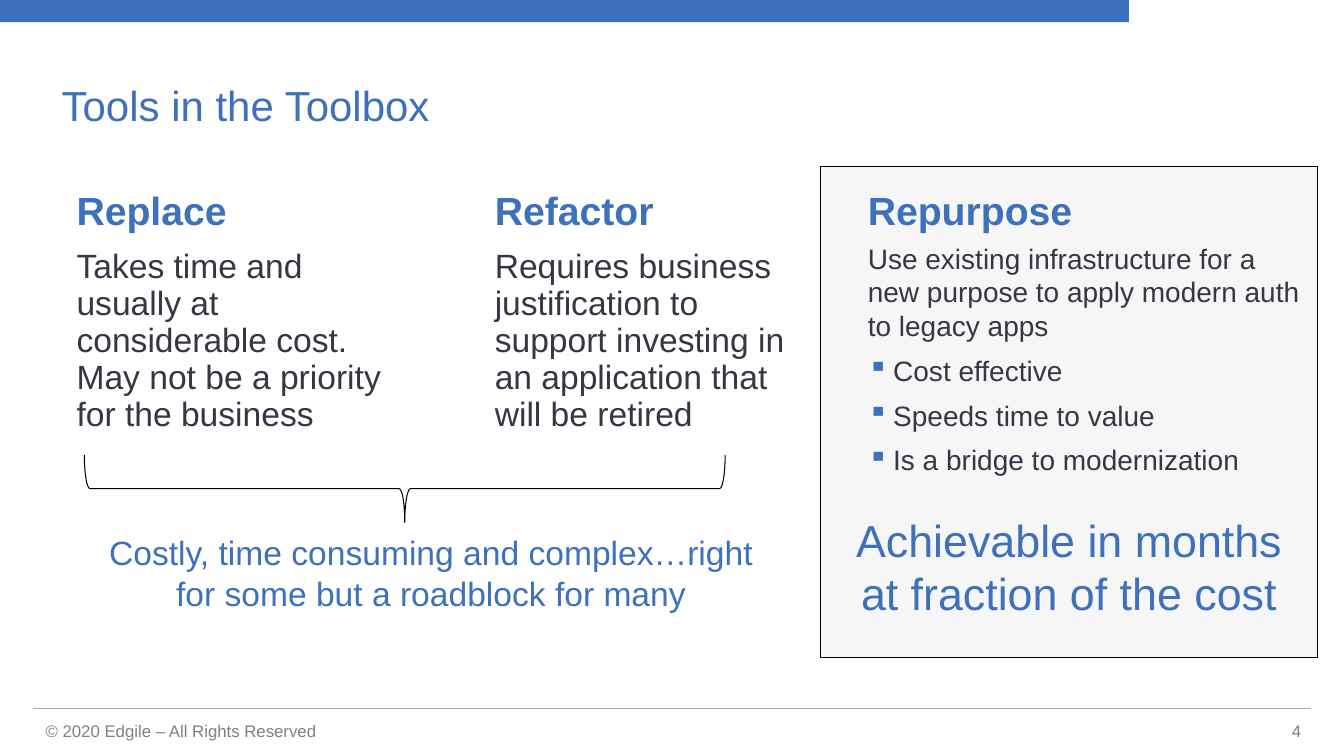
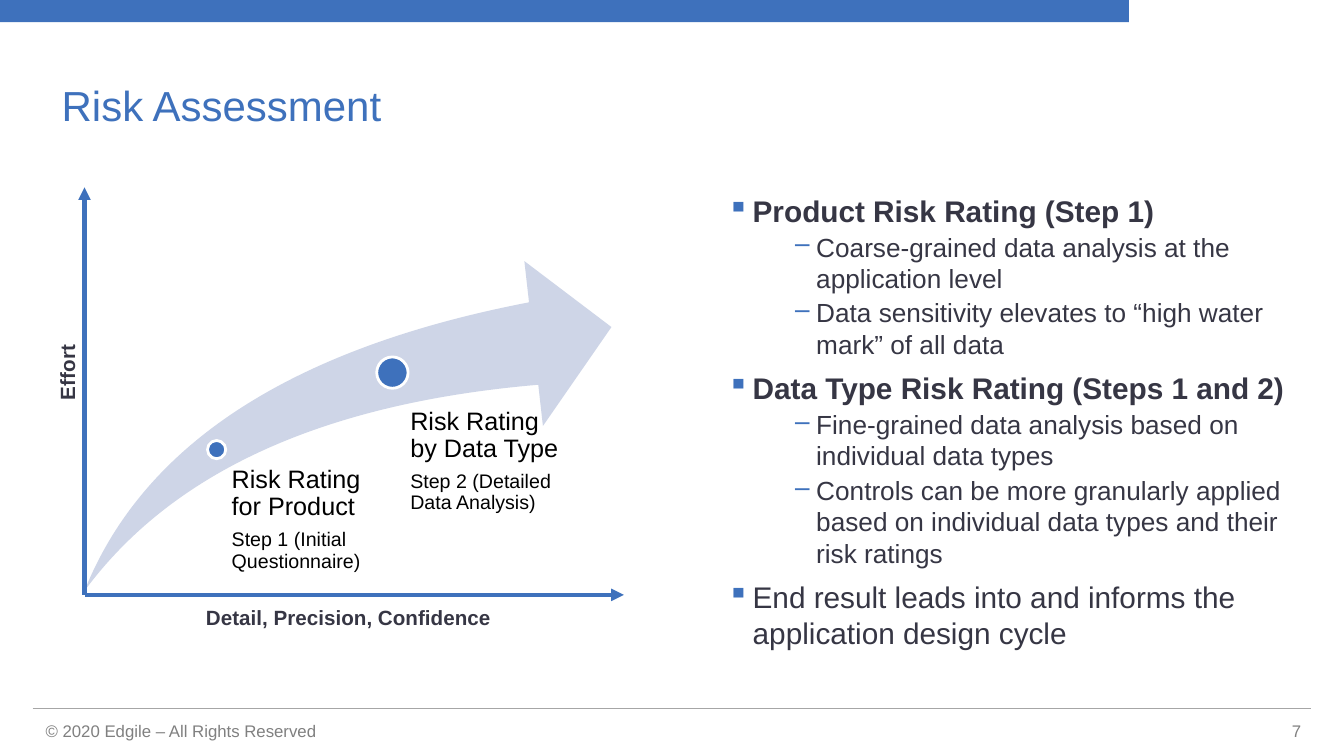
"""Build two slides: modernization tools and risk assessment."""
from dataclasses import dataclass

from lxml import etree
from pptx import Presentation
from pptx.dml.color import RGBColor
from pptx.enum.shapes import MSO_CONNECTOR, MSO_SHAPE
from pptx.enum.text import MSO_ANCHOR, MSO_AUTO_SIZE, PP_ALIGN
from pptx.oxml.ns import qn
from pptx.util import Cm, Pt

RECT, OVAL = MSO_SHAPE.RECTANGLE, MSO_SHAPE.OVAL
BRACE, SWOOSH = MSO_SHAPE.RIGHT_BRACE, MSO_SHAPE.SWOOSH_ARROW
STRAIGHT = MSO_CONNECTOR.STRAIGHT
LEFT, CENTER, RIGHT = PP_ALIGN.LEFT, PP_ALIGN.CENTER, PP_ALIGN.RIGHT
TOP, MIDDLE = MSO_ANCHOR.TOP, MSO_ANCHOR.MIDDLE
NO_FIT = MSO_AUTO_SIZE.NONE
TITLE_ONLY = 5


@dataclass(frozen=True)
class Style:
    """Describe the type and spacing of a paragraph."""
    size: float
    color: str
    bold: bool = False
    align: int = LEFT
    leading: object = 1.0
    before: float = 0
    after: float = 0
    bullet: str = ""
    margin: float = 0
    hang: float = 0
    level: int = 0


class Theme:
    """Hold the colours, font and text styles of the deck."""
    font = "Arial"
    blue, ink, black, white = "3E71BC", "363644", "000000", "FFFFFF"
    gray, rule, panel, swoosh = "808080", "A6A6A6", "E6E6E6", "CED5E7"
    panel_alpha = 32
    styles = {
        "title": Style(30, blue, leading=0.9),
        "footer": Style(12, gray),
        "number": Style(12, gray, align=RIGHT),
        "heading": Style(28, blue, True, leading=0.92, before=5.3, after=5.3),
        "drawback": Style(24, ink, leading=0.92, before=5.3, after=5.3),
        "benefit": Style(20, ink),
        "benefit item": Style(20, ink, leading=Pt(32), bullet="▪",
                              margin=0.64, hang=0.64),
        "verdict": Style(24, blue, align=CENTER),
        "promise": Style(32, blue, align=CENTER),
        "topic": Style(21.3, ink, True, before=5.3, after=2, bullet="▪",
                       margin=0.64, hang=0.64),
        "detail": Style(18.7, ink, after=2, bullet="–", margin=2.24,
                        hang=0.53, level=1),
        "result": Style(21.3, ink, before=5.3, after=2, bullet="▪",
                        margin=0.64, hang=0.64),
        "milestone": Style(18, black, leading=0.9, after=6.3),
        "step": Style(14, black, leading=0.9, after=2.1),
        "axis": Style(14.7, ink, True, CENTER),
    }


FOOTER = "© 2020 Edgile – All Rights Reserved"

TOOLS = {
    "title": "Tools in the Toolbox",
    "number": "4",
    "columns": [
        ((1.68, 4.67, 8.89, 12.57), [
            ("heading", "Replace"),
            ("drawback", "Takes time and usually at considerable cost. "
                         "May not be a priority for the business")]),
        ((12.22, 4.67, 8.33, 12.57), [
            ("heading", "Refactor"),
            ("drawback", "Requires business justification to support investing "
                         "in an application that will be retired")]),
        ((21.62, 4.67, 11.43, 6.6), [
            ("heading", "Repurpose"),
            ("benefit", "Use existing infrastructure for a new purpose to "
                        "apply modern auth to legacy apps"),
            ("benefit item", "Cost effective"),
            ("benefit item", "Speeds time to value"),
            ("benefit item", "Is a bridge to modernization")]),
        ((2.11, 13.28, 17.5, 2.31), [
            ("verdict", "Costly, time consuming and complex…right for some "
                        "but a roadblock for many")]),
        ((21.23, 12.78, 11.43, 3), [
            ("promise", "Achievable in months at fraction of the cost")]),
    ],
}

RISK = {
    "title": "Risk Assessment",
    "number": "7",
    "points": [
        ("topic", "Product Risk Rating (Step 1)"),
        ("detail", "Coarse-grained data analysis at the application level"),
        ("detail", "Data sensitivity elevates to “high water mark” of all data"),
        ("topic", "Data Type Risk Rating (Steps 1 and 2)"),
        ("detail", "Fine-grained data analysis based on individual data types"),
        ("detail", "Controls can be more granularly applied based on "
                   "individual data types and their risk ratings"),
        ("result", "End result leads into and informs the application "
                   "design cycle"),
    ],
    "milestones": [
        {"center": (5.46, 11.33), "diameter": 0.46,
         "label": (5.84, 11.76, 4.06, 3.56),
         "text": [("milestone", "Risk Rating for Product"),
                  ("step", "Step 1 (Initial Questionnaire)")]},
        {"center": (9.89, 9.39), "diameter": 0.79,
         "label": (10.34, 10.29, 3.89, 4.6),
         "text": [("milestone", "Risk Rating by Data Type"),
                  ("step", "Step 2 (Detailed Data Analysis)")]},
    ],
    "origin": (2.13, 14.99),
    "axis ends": [(2.13, 4.72), (15.72, 14.99)],
    "axis labels": [
        ("Detail, Precision, Confidence", (4.5, 15.11, 8.56, 0.89), 0),
        ("Effort", (0.05, 8.94, 3.28, 0.89), 270),
    ],
}


def rgb(color):
    """Turn a hex string into a colour."""
    return RGBColor.from_string(color)


def cm(values):
    """Convert numbers to centimetre lengths."""
    return [Cm(value) for value in values]


def add_bullet(paragraph, style):
    """Give a paragraph a hanging blue bullet."""
    props = paragraph._p.get_or_add_pPr()
    props.set("marL", str(Cm(style.margin)))
    props.set("indent", str(-Cm(style.hang)))
    tint = etree.SubElement(props, qn("a:buClr"))
    etree.SubElement(tint, qn("a:srgbClr"), val=Theme.blue)
    etree.SubElement(props, qn("a:buChar"), char=style.bullet)


def write(frame, entries):
    """Fill a text frame with styled paragraphs."""
    frame.text = "\n".join(text for _, text in entries)
    for index, (paragraph, (name, _)) in enumerate(zip(frame.paragraphs, entries)):
        style = Theme.styles[name]
        if style.bullet:
            add_bullet(paragraph, style)
        paragraph.level = style.level
        paragraph.alignment = style.align
        paragraph.line_spacing = style.leading
        paragraph.space_before = Pt(style.before if index else 0)
        paragraph.space_after = Pt(style.after)
        for run in paragraph.runs:
            run.font.name = Theme.font
            run.font.size = Pt(style.size)
            run.font.bold = style.bold
            run.font.color.rgb = rgb(style.color)


def add_text(slide, box, entries, anchor=TOP, inset=(0.25, 0.13), rotation=0):
    """Add a wrapping text box."""
    text_box = slide.shapes.add_textbox(*cm(box))
    text_box.rotation = rotation
    frame = text_box.text_frame
    frame.word_wrap = True
    frame.vertical_anchor = anchor
    frame.margin_left = frame.margin_right = Cm(inset[0])
    frame.margin_top = frame.margin_bottom = Cm(inset[1])
    write(frame, entries)


def add_shape(slide, kind, box, fill=None, line=None, width=0.75):
    """Add a flat preset shape."""
    shape = slide.shapes.add_shape(kind, *cm(box))
    shape.shadow.inherit = False
    if fill:
        shape.fill.solid()
        shape.fill.fore_color.rgb = rgb(fill)
    else:
        shape.fill.background()
    if line:
        shape.line.color.rgb = rgb(line)
        shape.line.width = Pt(width)
    else:
        shape.line.fill.background()
    return shape


def add_line(slide, start, end, color, width, arrow=False):
    """Add a straight line, with an arrowhead at its end if asked."""
    line = slide.shapes.add_connector(STRAIGHT, *cm(start + end))
    line.line.color.rgb = rgb(color)
    line.line.width = Pt(width)
    if arrow:
        etree.SubElement(line.line._get_or_add_ln(), qn("a:tailEnd"), type="triangle")
    etree.SubElement(line._element.spPr, qn("a:effectLst"))


def add_slide(deck, content):
    """Add a slide with the shared band, title and footer."""
    slide = deck.slides.add_slide(deck.slide_layouts[TITLE_ONLY])
    add_shape(slide, RECT, (0, 0, 28.45, 0.56), Theme.blue)
    add_line(slide, (0.82, 17.86), (33.05, 17.86), Theme.rule, 0.75)
    add_text(slide, (0.82, 17.98, 9, 0.86), [("footer", FOOTER)], MIDDLE, (0.33, 0.18))
    add_text(slide, (32, 18.03, 1.04, 0.76), [("number", content["number"])], MIDDLE)
    title = slide.shapes.title
    title.left, title.top, title.width, title.height = cm((1.3, 2.01, 31.29, 1.42))
    title.text_frame.auto_size = NO_FIT
    title.text_frame.vertical_anchor = MIDDLE
    write(title.text_frame, [("title", content["title"])])
    return slide


def build_tools(deck):
    """Build the comparison of three tools."""
    slide = add_slide(deck, TOOLS)
    panel = add_shape(slide, RECT, (20.68, 4.19, 12.52, 12.37), Theme.panel, Theme.black)
    tint = panel._element.spPr.find(qn("a:solidFill")).find(qn("a:srgbClr"))
    etree.SubElement(tint, qn("a:alpha"), val=str(Theme.panel_alpha * 1000))
    for box, entries in TOOLS["columns"]:
        add_text(slide, box, entries)
    brace = add_shape(slide, BRACE, (9.35, 4.24, 1.7, 16.15), line=Theme.black)
    brace.rotation = 90


def build_risk(deck):
    """Build the risk curve and its explanation."""
    slide = add_slide(deck, RISK)
    add_text(slide, (18.08, 4.72, 14.96, 12.57), RISK["points"])
    curve = add_shape(slide, SWOOSH, (2.13, 6.58, 13.28, 8.31), Theme.swoosh)
    curve.adjustments[0] = curve.adjustments[1] = 0.25
    for milestone in RISK["milestones"]:
        size = milestone["diameter"]
        x, y = (middle - size / 2 for middle in milestone["center"])
        add_shape(slide, OVAL, (x, y, size, size), Theme.blue, Theme.white, 2)
        add_text(slide, milestone["label"], milestone["text"], inset=(0, 0))
    for end in RISK["axis ends"]:
        add_line(slide, RISK["origin"], end, Theme.blue, 3, arrow=True)
    for text, box, rotation in RISK["axis labels"]:
        add_text(slide, box, [("axis", text)], rotation=rotation)


def main():
    """Build and save the deck."""
    deck = Presentation()
    deck.slide_width, deck.slide_height = cm((33.87, 19.05))
    build_tools(deck)
    build_risk(deck)
    deck.save("out.pptx")


if __name__ == "__main__":
    main()
